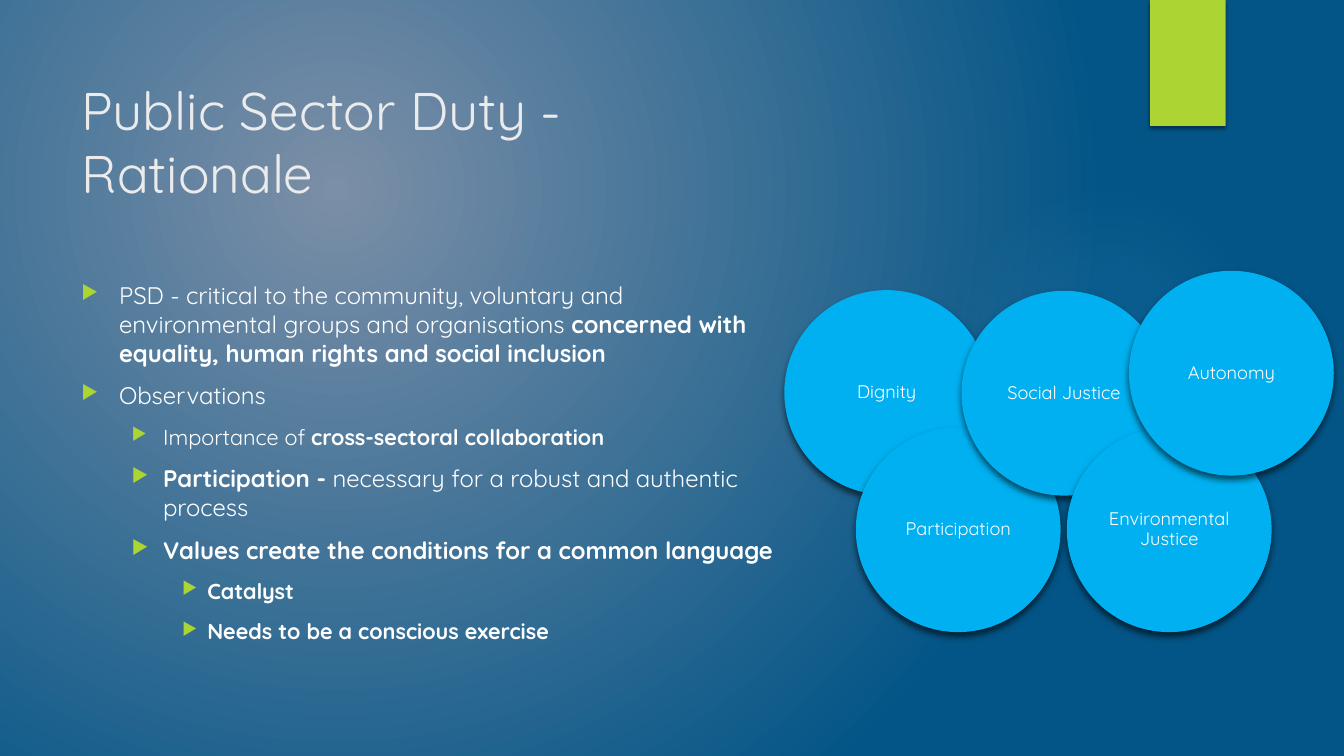
from dataclasses import dataclass

from pptx import Presentation
from pptx.dml.color import RGBColor
from pptx.enum.shapes import MSO_SHAPE as Preset
from pptx.enum.text import MSO_ANCHOR as Anchor, MSO_AUTO_SIZE as AutoSize, PP_ALIGN as Align
from pptx.oxml import parse_xml
from pptx.oxml.ns import nsdecls, qn
from pptx.util import Pt


@dataclass(frozen=True)
class Theme:
    font: str = "Quicksand"
    green: str = "ACD433"
    blue: str = "00B0F0"
    white: str = "FFFFFF"
    title: str = "EBEBEB"
    glow: str = "7AC4F0"
    centre: str = "7B8FA7"
    edge: str = "035587"
    title_size: float = 37.8
    body_size: float = 17.1
    small_size: float = 15.5
    label_size: float = 13


THEME = Theme()


def set_values(target, values, color=None):
    for name, value in values.items():
        setattr(target, name, value)
    if color:
        target.color.rgb = RGBColor.from_string(color)


def radial_gradient(stops, focus):
    """Stops are (position %, colour, opacity %); focus is left, top, right, bottom in %."""
    stop_xml = "".join(
        f'<a:gs pos="{position * 1000}"><a:srgbClr val="{color}">'
        f'<a:alpha val="{opacity * 1000}"/></a:srgbClr></a:gs>'
        for position, color, opacity in stops)
    sides = " ".join(f'{side}="{value * 1000}"' for side, value in zip("ltrb", focus))
    return parse_xml(
        f'<a:gradFill {nsdecls("a")} rotWithShape="1"><a:gsLst>{stop_xml}</a:gsLst>'
        f'<a:path path="circle"><a:fillToRect {sides}/></a:path></a:gradFill>')


presentation = Presentation()
set_values(presentation, {"slide_width": Pt(960), "slide_height": Pt(540)})
slide = presentation.slides.add_slide(presentation.slide_layouts[5])
shapes = slide.shapes

# Background
slide.background.fill.solid()
background = slide.element.find(".//" + qn("p:bgPr"))
background.replace(background[0], radial_gradient(
    [(0, THEME.centre, 100), (100, THEME.edge, 100)], (50, 50, 100, 100)))

# Soft glow behind the circles
glow = shapes.add_shape(Preset.OVAL, Pt(677.5), Pt(131.8), Pt(221.8), Pt(221.8))
glow.shadow.inherit = False
glow.line.fill.background()
glow.element.spPr.insert(2, radial_gradient(
    [(0, THEME.glow, 7), (36, THEME.glow, 6), (69, THEME.glow, 0)], (50, 50, 50, 50)))

# Green tab
tab = shapes.add_shape(Preset.RECTANGLE, Pt(821.5), Pt(0), Pt(54), Pt(90))
shadowed = [(tab, THEME.green, 45, 3, 2)]

# Title
title = shapes.title
set_values(title, {"left": Pt(51), "top": Pt(51), "width": Pt(518), "height": Pt(99.5)})
set_values(title.text_frame, {"text": "Public Sector Duty - Rationale", "word_wrap": True,
                              "auto_size": AutoSize.NONE, "vertical_anchor": Anchor.MIDDLE})
title_paragraph = title.text_frame.paragraphs[0]
title_paragraph.alignment = Align.LEFT
set_values(title_paragraph.runs[0].font,
           {"name": THEME.font, "size": Pt(THEME.title_size)}, THEME.title)

# Bulleted text: level, then runs of (text, size, bold)
BODY, SMALL = THEME.body_size, THEME.small_size
bullets = [
    (0, [("PSD - critical to the community, voluntary and environmental groups and "
          "organisations ", BODY, False),
         ("concerned with equality, human rights and social inclusion", BODY, True)]),
    (0, [("Observations", BODY, False)]),
    (1, [("Importance of ", SMALL, False), ("cross-sectoral collaboration", SMALL, True)]),
    (1, [("Participation -", BODY, True),
         (" necessary for a robust and authentic process", BODY, False)]),
    (1, [("Values create the conditions for a common language", BODY, True)]),
    (2, [("Catalyst", SMALL, True)]),
    (2, [("Needs to be a conscious exercise", SMALL, True)]),
]
indents = [(27, -27), (58.5, -22.5), (90, -18)]

body = shapes.add_textbox(Pt(51), Pt(197), Pt(518), Pt(267)).text_frame
body.word_wrap = True
for index, (level, runs) in enumerate(bullets):
    paragraph = body.add_paragraph() if index else body.paragraphs[0]
    margin, indent = indents[level]
    properties = paragraph._p.get_or_add_pPr()
    properties.set("marL", str(Pt(margin)))
    properties.set("indent", str(Pt(indent)))
    for bullet_xml in (f'<a:buClr {nsdecls("a")}><a:srgbClr val="{THEME.green}"/></a:buClr>',
                       f'<a:buSzPct {nsdecls("a")} val="80000"/>',
                       f'<a:buChar {nsdecls("a")} char="▶"/>'):
        properties.append(parse_xml(bullet_xml))
    set_values(paragraph, {"level": level, "space_before": Pt(10 if index else 0)})
    for text, size, bold in runs:
        run = paragraph.add_run()
        run.text = text
        set_values(run.font, {"name": THEME.font, "size": Pt(size), "bold": bold}, THEME.white)

# Overlapping value circles, back to front
circles = [
    ("Dignity", 560.2, 207.2),
    ("Participation", 611.3, 305.2),
    ("Social Justice", 686.8, 207.7),
    ("Environmental Justice", 762, 305.2),
    ("Autonomy", 806.4, 193.4),
]
for label, left, top in circles:
    circle = shapes.add_shape(Preset.OVAL, Pt(left), Pt(top), Pt(146.3), Pt(146.3))
    shadowed.append((circle, THEME.blue, 60, 5, 3))
    set_values(circle.text_frame, {
        "text": label, "word_wrap": True, "vertical_anchor": Anchor.MIDDLE,
        "margin_left": Pt(3.6), "margin_right": Pt(3.6),
        "margin_top": Pt(3.6), "margin_bottom": Pt(3.6)})
    paragraph = circle.text_frame.paragraphs[0]
    set_values(paragraph, {"alignment": Align.CENTER, "line_spacing": 0.9})
    set_values(paragraph.runs[0].font,
               {"name": THEME.font, "size": Pt(THEME.label_size)}, THEME.white)

# Fills and drop shadows
for shape, color, opacity, blur, distance in shadowed:
    shape.fill.solid()
    shape.fill.fore_color.rgb = RGBColor.from_string(color)
    shape.line.fill.background()
    shape.shadow.inherit = False
    shape.element.spPr.find(qn("a:effectLst")).append(parse_xml(
        f'<a:outerShdw {nsdecls("a")} blurRad="{Pt(blur)}" dist="{Pt(distance)}" '
        f'dir="5400000" rotWithShape="0"><a:srgbClr val="000000">'
        f'<a:alpha val="{opacity * 1000}"/></a:srgbClr></a:outerShdw>'))

presentation.save("out.pptx")
